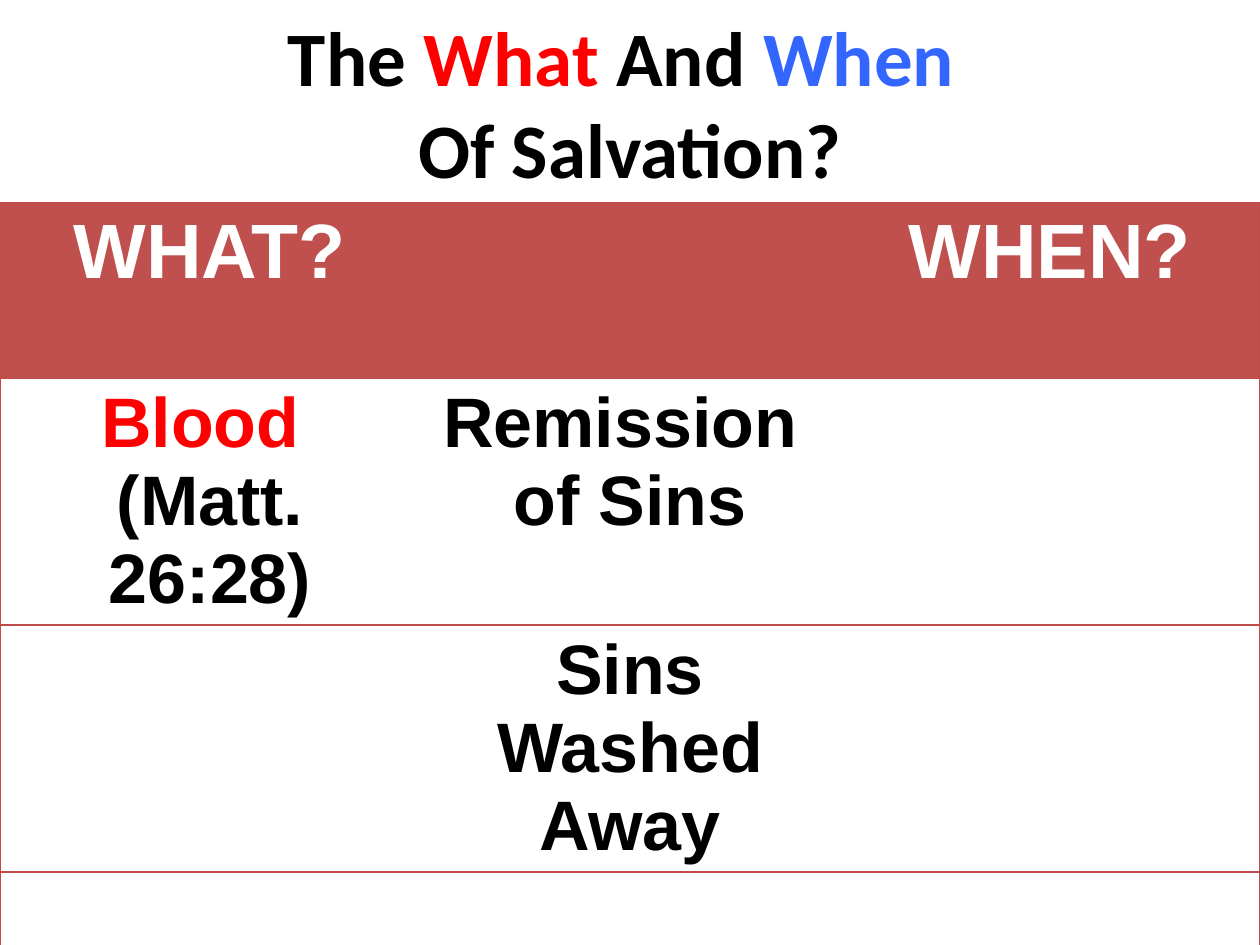
from lxml.etree import SubElement
from pptx import Presentation
from pptx.dml.color import RGBColor
from pptx.enum.text import MSO_ANCHOR, MSO_AUTO_SIZE, PP_ALIGN
from pptx.oxml.ns import qn
from pptx.util import Pt

COLORS = {
    "black": "000000",
    "white": "FFFFFF",
    "red": "FF0000",
    "blue": "3366FF",
    "header": "C0504D",
    "border": "BF4C48",
}
TITLE = [
    ("The ", "black"),
    ("What", "red"),
    (" And ", "black"),
    ("When ", "blue"),
    ("Of Salvation?", "black"),
]
ROWS = [
    ["WHAT?", "", "WHEN?"],
    ["Blood \n(Matt. 26:28)", "Remission \nof Sins", ""],
    ["", "Sins Washed Away", ""],
    ["", "", ""],
]
ROW_HEIGHTS = [100, 108, 108, 100]
COL_WIDTH = 240


def rgb(name):
    return RGBColor.from_string(COLORS[name])


def format_run(r, font, size, color):
    r.font.name = font
    r.font.size = Pt(size)
    r.font.bold = True
    r.font.color.rgb = rgb(color)


def add_title(s):
    sp = s.shapes.title
    sp.left, sp.top, sp.width, sp.height = Pt(54), Pt(0), Pt(612), Pt(116)
    tf = sp.text_frame
    tf.word_wrap = True
    tf.auto_size = MSO_AUTO_SIZE.NONE
    tf.vertical_anchor = MSO_ANCHOR.MIDDLE
    p = tf.paragraphs[0]
    p.alignment = PP_ALIGN.CENTER
    for text, color in TITLE:
        if text == "Of Salvation?":
            p.add_line_break()
        r = p.add_run()
        r.text = text
        format_run(r, "Calibri", 44, color)


def set_borders(cell, visible):
    tc_pr = cell._tc.get_or_add_tcPr()
    for side in "LRTB":
        ln = SubElement(tc_pr, qn(f"a:ln{side}"), w=str(Pt(0.75)))
        if side in visible:
            fill = SubElement(ln, qn("a:solidFill"))
            SubElement(fill, qn("a:srgbClr"), val=COLORS["border"])
        else:
            SubElement(ln, qn("a:noFill"))


def fill_cell(cell, text, row, col):
    sides = "TB" + {0: "L", 2: "R"}.get(col, "")
    set_borders(cell, sides)
    cell.fill.solid()
    cell.fill.fore_color.rgb = rgb("white" if row else "header")
    if not text:
        return
    cell.text_frame.text = text
    for p in cell.text_frame.paragraphs:
        p.alignment = PP_ALIGN.CENTER
        for r in p.runs:
            color = "red" if r.text.startswith("Blood") else "black"
            format_run(r, "Arial", 40 if row else 44, color if row else "white")


def add_salvation_table(s):
    cols = len(ROWS[0])
    frame = s.shapes.add_table(
        len(ROWS), cols, Pt(0), Pt(116), Pt(cols * COL_WIDTH), Pt(sum(ROW_HEIGHTS))
    )
    table = frame.table
    table.horz_banding = False
    for column in table.columns:
        column.width = Pt(COL_WIDTH)
    for i, (texts, height) in enumerate(zip(ROWS, ROW_HEIGHTS)):
        table.rows[i].height = Pt(height)
        for j, text in enumerate(texts):
            fill_cell(table.cell(i, j), text, i, j)


def main():
    prs = Presentation()
    prs.slide_width, prs.slide_height = Pt(720), Pt(540)
    s = prs.slides.add_slide(prs.slide_layouts[0])
    subtitle = s.placeholders[1].element
    subtitle.getparent().remove(subtitle)
    add_title(s)
    add_salvation_table(s)
    prs.save("out.pptx")


if __name__ == "__main__":
    main()
